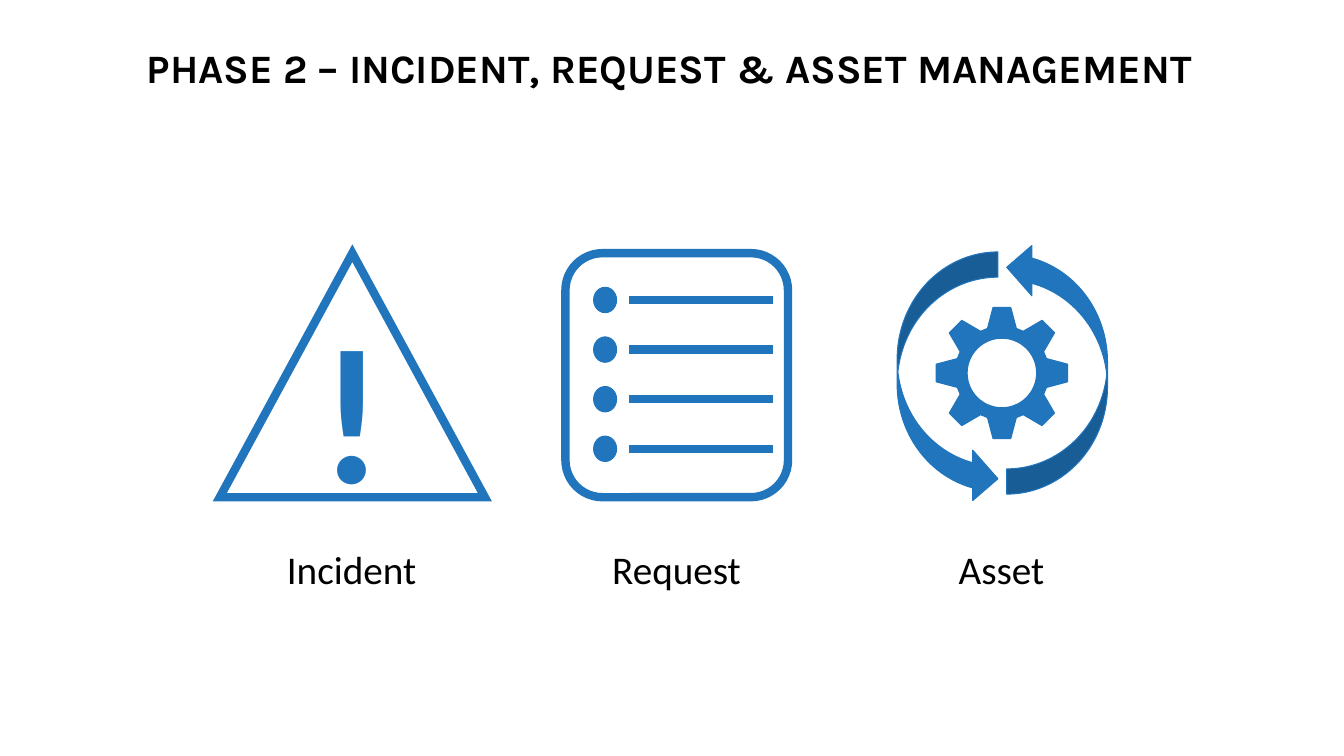
from dataclasses import dataclass
from math import cos, pi, sin

from lxml.etree import SubElement
from pptx import Presentation
from pptx.dml.color import RGBColor
from pptx.enum.shapes import MSO_CONNECTOR, MSO_SHAPE
from pptx.enum.text import MSO_ANCHOR, PP_ALIGN
from pptx.oxml.ns import qn
from pptx.shapes.autoshape import Shape
from pptx.shapes.shapetree import GroupShapes
from pptx.text.text import TextFrame
from pptx.util import Cm, Pt

BLUE = "2075BC"
BLACK = "000000"


@dataclass(frozen=True)
class Box:
    left: float
    top: float
    width: float
    height: float

    def lengths(self) -> tuple[Cm, Cm, Cm, Cm]:
        return Cm(self.left), Cm(self.top), Cm(self.width), Cm(self.height)


@dataclass(frozen=True)
class CycleArrow:
    box: Box
    rotation: int


CYCLE = (
    CycleArrow(Box(22.61, 6.35, 2.54, 6.35), 0),
    CycleArrow(Box(25.37, 6.1, 2.54, 6.35), 180),
)


def color(code: str) -> RGBColor:
    return RGBColor.from_string(code)


def write(frame: TextFrame, text: str, font: str, size: float, code: str,
          align: PP_ALIGN, bold: bool = False) -> None:
    frame.word_wrap = True
    paragraph = frame.paragraphs[0]
    paragraph.text = text
    paragraph.alignment = align
    paragraph.font.name = font
    paragraph.font.size = Pt(size)
    paragraph.font.bold = bold
    paragraph.font.color.rgb = color(code)


def paint(shape: Shape, line_width: float, filled: bool) -> None:
    shape.shadow.inherit = False
    if filled:
        shape.fill.solid()
        shape.fill.fore_color.rgb = color(BLUE)
    else:
        shape.fill.background()
    shape.line.color.rgb = color(BLUE)
    shape.line.width = Pt(line_width)


def add_figure(shapes: GroupShapes, preset: MSO_SHAPE, box: Box,
               line_width: float = 0.75, filled: bool = True) -> Shape:
    figure = shapes.add_shape(preset, *box.lengths())
    paint(figure, line_width, filled)
    return figure


def add_rule(shapes: GroupShapes, start: float, end: float, y: float) -> None:
    rule = shapes.add_connector(
        MSO_CONNECTOR.STRAIGHT, Cm(start), Cm(y), Cm(end), Cm(y))
    rule.line.color.rgb = color(BLUE)
    rule.line.width = Pt(6)
    SubElement(rule._element.spPr, qn("a:effectLst"))


def add_label(shapes: GroupShapes, text: str, center: float) -> None:
    label = shapes.add_textbox(*Box(center - 4.11, 13.61, 8.22, 1.7).lengths())
    write(label.text_frame, text, "Calibri", 28, BLACK, PP_ALIGN.CENTER)


def draw_incident(shapes: GroupShapes) -> None:
    triangle = add_figure(shapes, MSO_SHAPE.ISOSCELES_TRIANGLE,
                          Box(5.54, 6.38, 6.68, 6.15), 6, False)
    SubElement(triangle.line._get_or_add_ln(), qn("a:miter"), lim="800000")
    warning = triangle.text_frame
    warning.vertical_anchor = MSO_ANCHOR.MIDDLE
    warning.margin_bottom = Cm(1.63)
    write(warning, "!", "Calibri", 138, BLUE, PP_ALIGN.CENTER, True)


def draw_request(shapes: GroupShapes) -> None:
    add_figure(shapes, MSO_SHAPE.ROUNDED_RECTANGLE,
               Box(14.25, 6.38, 5.61, 6.15), 6, False)
    for entry in range(4):
        y = 7.56 + 1.25 * entry
        add_rule(shapes, 19.48, 15.85, y)
        add_figure(shapes, MSO_SHAPE.OVAL, Box(14.96, y - 0.32, 0.58, 0.64))


def draw_gear(shapes: GroupShapes, center_x: float, center_y: float) -> None:
    def turned(along: float, across: float, angle: float) -> tuple[int, int]:
        return (Cm(center_x + along * cos(angle) - across * sin(angle)),
                Cm(center_y + along * sin(angle) + across * cos(angle)))

    tooth = ((1.12, -0.36), (1.65, -0.22), (1.65, 0.22), (1.12, 0.36))
    rim = [turned(along, across, step * pi / 4)
           for step in range(8) for along, across in tooth]
    hole = [turned(0.88, 0, -step * pi / 36) for step in range(72)]
    builder = shapes.build_freeform(*rim[0])
    builder.add_line_segments(rim[1:])
    builder.move_to(*hole[0])
    builder.add_line_segments(hole[1:])
    paint(builder.convert_to_shape(), 1, True)


def draw_asset(shapes: GroupShapes) -> None:
    draw_gear(shapes, 25.25, 9.4)
    for arrow in CYCLE:
        figure = add_figure(shapes, MSO_SHAPE.CURVED_RIGHT_ARROW, arrow.box)
        figure.rotation = arrow.rotation


def main() -> None:
    deck = Presentation()
    deck.slide_width, deck.slide_height = Cm(33.87), Cm(19.05)
    slide = deck.slides.add_slide(deck.slide_layouts[6])

    title = slide.shapes.add_textbox(*Box(3.45, 0.51, 28.09, 2.51).lengths())
    title.text_frame.vertical_anchor = MSO_ANCHOR.MIDDLE
    write(title.text_frame, "PHASE 2 – INCIDENT, REQUEST & ASSET MANAGEMENT",
          "Karla", 28.8, BLACK, PP_ALIGN.LEFT, True)
    title.text_frame.paragraphs[0].line_spacing = 0.9

    topics = (("Incident", draw_incident), ("Request", draw_request),
              ("Asset", draw_asset))
    for column, (name, draw_icon) in enumerate(topics):
        topic = slide.shapes.add_group_shape().shapes
        draw_icon(topic)
        add_label(topic, name, 8.86 + 8.19 * column)

    deck.save("out.pptx")


if __name__ == "__main__":
    main()
